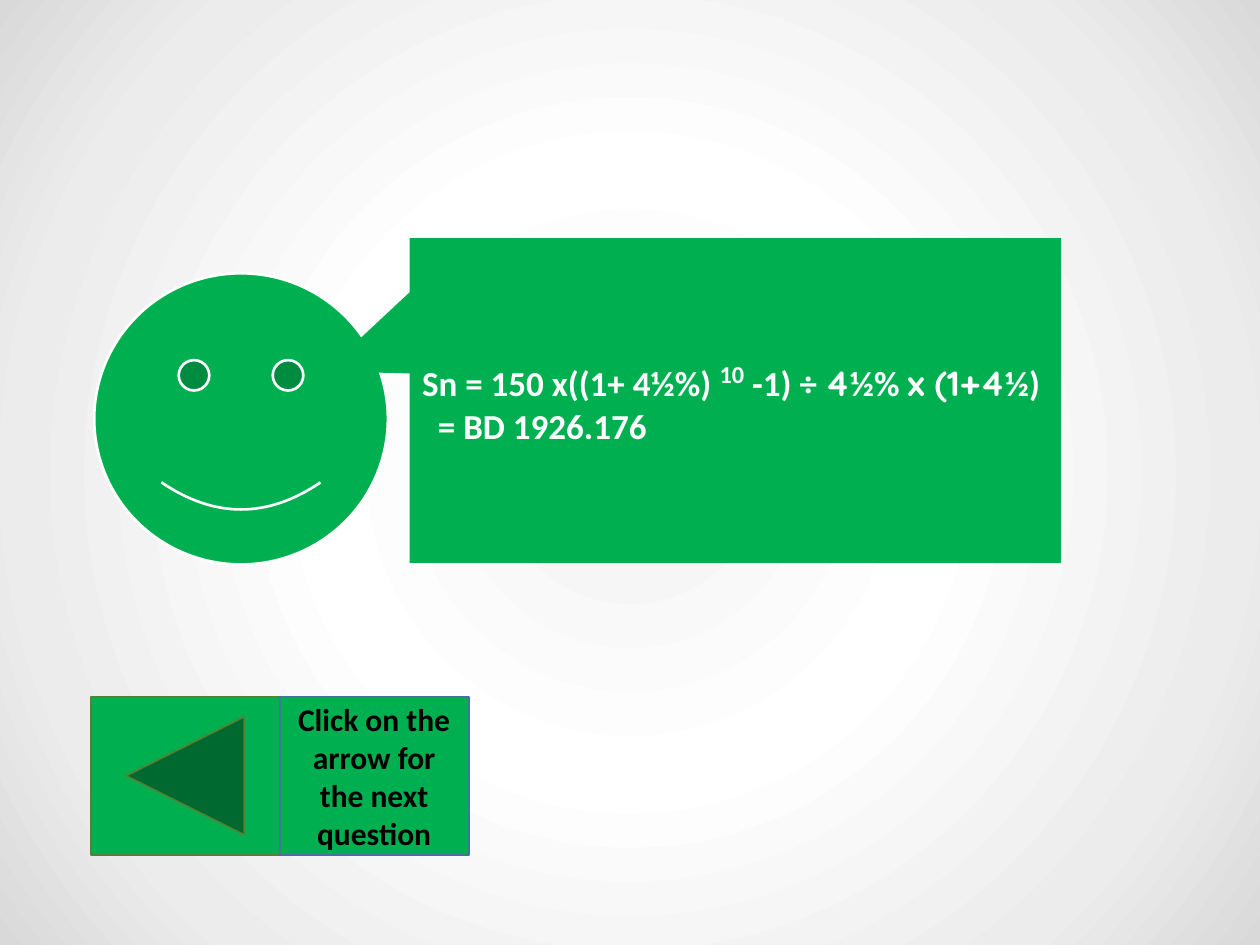
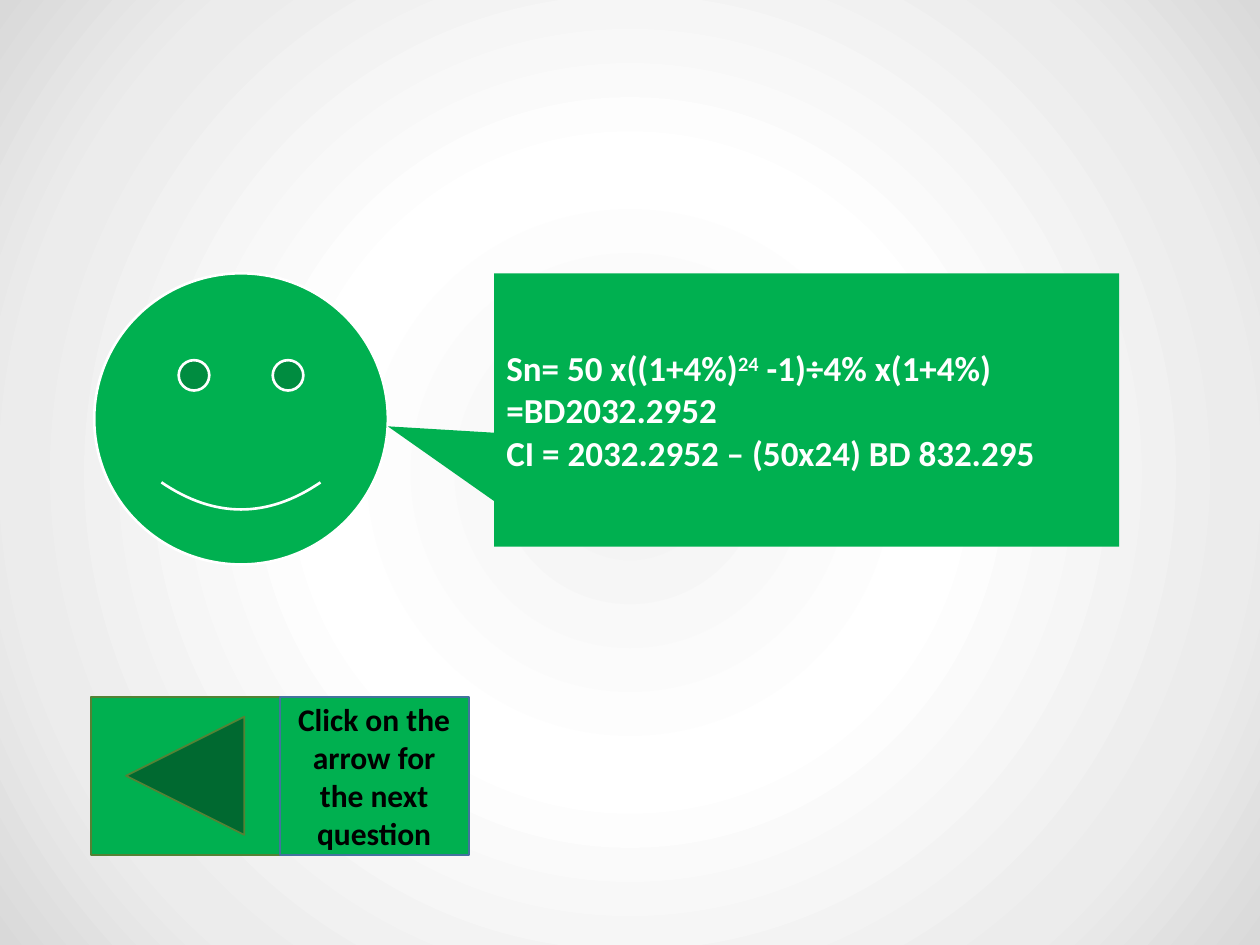
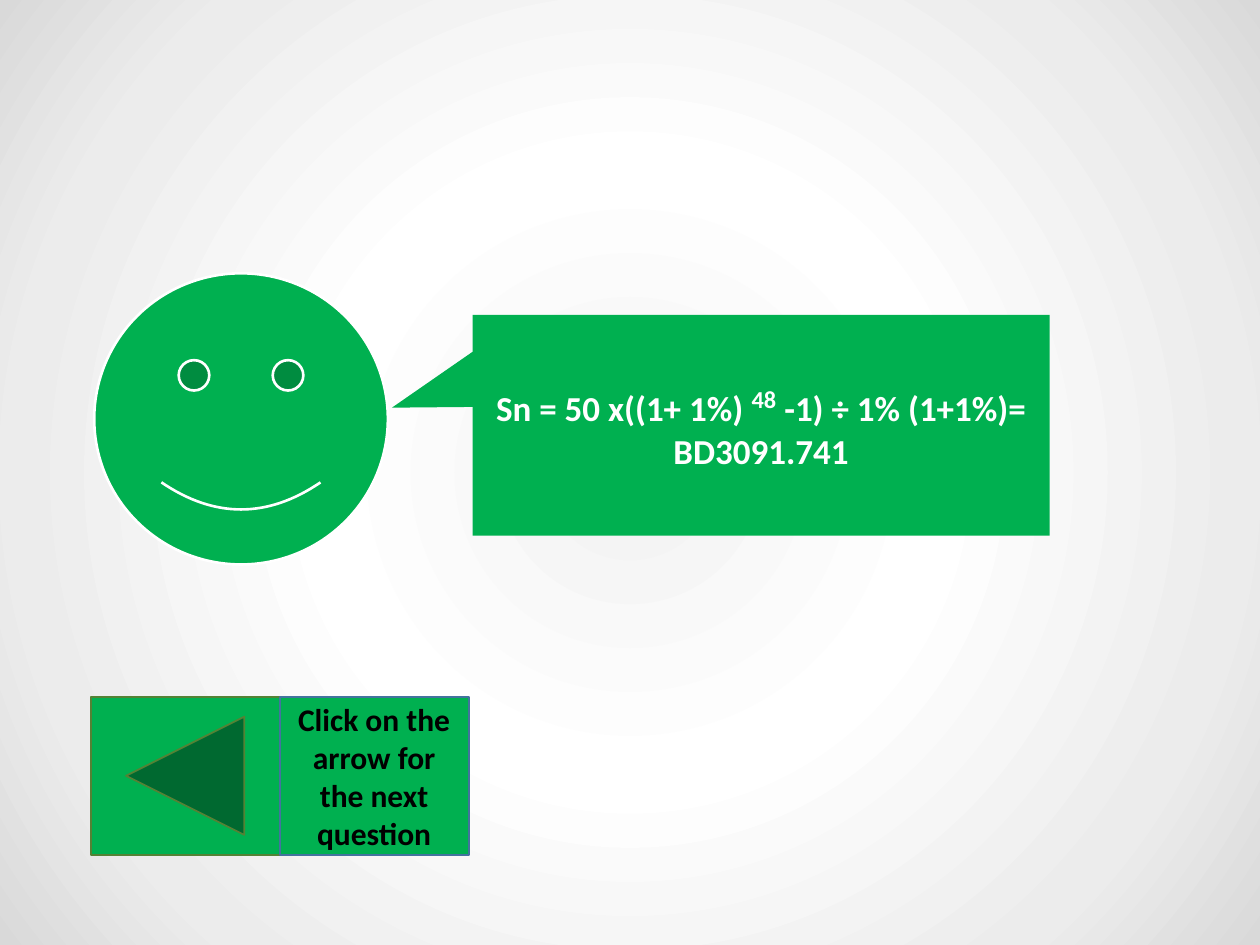
from lxml import etree
from pptx import Presentation
from pptx import util as u
from pptx.dml.color import RGBColor
from pptx.enum import shapes, text
from pptx.oxml.ns import qn

COLORS = {
    "green": "00B050",
    "white": "FFFFFF",
    "black": "000000",
    "button_edge": "548235",
    "prompt_edge": "43739E",
}
BACKDROP = [(0, "F2F2F2"), (39, "FFFFFF"), (78, "ECECEC"), (100, "D9D9D9")]
SLIDE_SIZE = (25.4, 19.05)
SMILEY = (1.9, 5.51, 5.92, 5.87)
BUTTON = (1.83, 14.05, 3.81, 3.18)
PROMPT = "Click on the arrow for the next question"
ROUNDED = {"font": "Quicksand"}
POWER = {"raised": True}
BIG_POWER = {"raised": True, "size": 24}

ANSWERS = [
    {
        "box": (8.26, 4.8, 13.13, 6.55),
        "tip": (-0.63, -0.09),
        "lines": [
            [("Sn = 150 x((1+ 4½%) ", {}), ("10", BIG_POWER), (" -1) ÷ ", {}),
             ("4", ROUNDED), ("½% ", {}), ("x (1+4", ROUNDED), ("½)", {})],
            [("= BD 1926.176", {})],
        ],
        "indents": (0, 0.32),
    },
    {
        "box": (9.96, 5.51, 12.6, 5.51),
        "tip": (-0.67, 0.06),
        "lines": [
            [("Sn= 50 x((1+4%)", {}), ("24", POWER),
             (" -1)÷4% x(1+4%) =BD2032.2952", {})],
            [("CI = 2032.2952 – (50x24) BD 832.295", {})],
        ],
    },
    {
        "box": (9.53, 6.35, 11.63, 4.45),
        "tip": (-0.64, -0.08),
        "lines": [
            [("Sn = 50 x((1+ 1%) ", {}), ("48", BIG_POWER),
             (" -1) ÷ 1% (1+1%)= BD3091.741", {})],
        ],
        "align": text.PP_ALIGN.CENTER,
    },
]


def rgb(name):
    return RGBColor.from_string(COLORS[name])


def paint_backdrop(master):
    master.background.fill.background()
    background = master.element.find(".//" + qn("p:bgPr"))
    gradient = etree.Element(qn("a:gradFill"), rotWithShape="1")
    stops = etree.SubElement(gradient, qn("a:gsLst"))
    for position, color in BACKDROP:
        stop = etree.SubElement(stops, qn("a:gs"), pos=str(position * 1000))
        etree.SubElement(stop, qn("a:srgbClr"), val=color)
    circle = etree.SubElement(gradient, qn("a:path"), path="circle")
    center = {side: "50000" for side in "ltrb"}
    etree.SubElement(circle, qn("a:fillToRect"), **center)
    background.replace(background[0], gradient)


def add_part(slide, preset, box, edge=None, width=1, adjust=()):
    part = slide.shapes.add_shape(preset, *map(u.Cm, box))
    part.shadow.inherit = False
    part.fill.solid()
    part.fill.fore_color.rgb = rgb("green")
    if edge:
        part.line.color.rgb = rgb(edge)
        part.line.width = u.Pt(width)
    else:
        part.line.fill.background()
    for index, value in enumerate(adjust):
        part.adjustments[index] = value
    return part


def add_run(paragraph, words, font="Calibri", size=20, color="white", raised=False):
    run = paragraph.add_run()
    run.text = words
    run.font.name = font
    run.font.size = u.Pt(size)
    run.font.bold = True
    run.font.color.rgb = rgb(color)
    if raised:
        run.font._element.set("baseline", "30000")


def write(part, lines, align=text.PP_ALIGN.LEFT, indents=(), **style):
    frame = part.text_frame
    frame.word_wrap = True
    frame.vertical_anchor = text.MSO_ANCHOR.MIDDLE
    for index, runs in enumerate(lines):
        paragraph = frame.add_paragraph() if index else frame.paragraphs[0]
        paragraph.alignment = align
        if indents:
            paragraph._p.get_or_add_pPr().set("marL", str(u.Cm(indents[index])))
        for words, changes in runs:
            add_run(paragraph, words, **{**style, **changes})


def add_answer(slide, answer):
    preset = shapes.MSO_SHAPE
    add_part(slide, preset.SMILEY_FACE, SMILEY, "white", 1.5, [0.05])
    add_part(slide, preset.ACTION_BUTTON_BACK_OR_PREVIOUS, BUTTON, "button_edge")

    callout = add_part(slide, preset.RECTANGULAR_CALLOUT, answer["box"], adjust=answer["tip"])
    write(callout, answer["lines"], answer.get("align", text.PP_ALIGN.LEFT),
          answer.get("indents", ()))

    left, top, width, height = BUTTON
    prompt = add_part(slide, preset.PENTAGON, (left + width, top, width, height),
                      "prompt_edge", adjust=[0])
    prompt.element.spPr.xfrm.set("flipH", "1")
    write(prompt, [[(PROMPT, {})]], text.PP_ALIGN.CENTER, size=18, color="black")


def main():
    deck = Presentation()
    deck.slide_width, deck.slide_height = map(u.Cm, SLIDE_SIZE)
    paint_backdrop(deck.slide_master)
    for answer in ANSWERS:
        add_answer(deck.slides.add_slide(deck.slide_layouts[6]), answer)
    deck.save("out.pptx")


if __name__ == "__main__":
    main()
